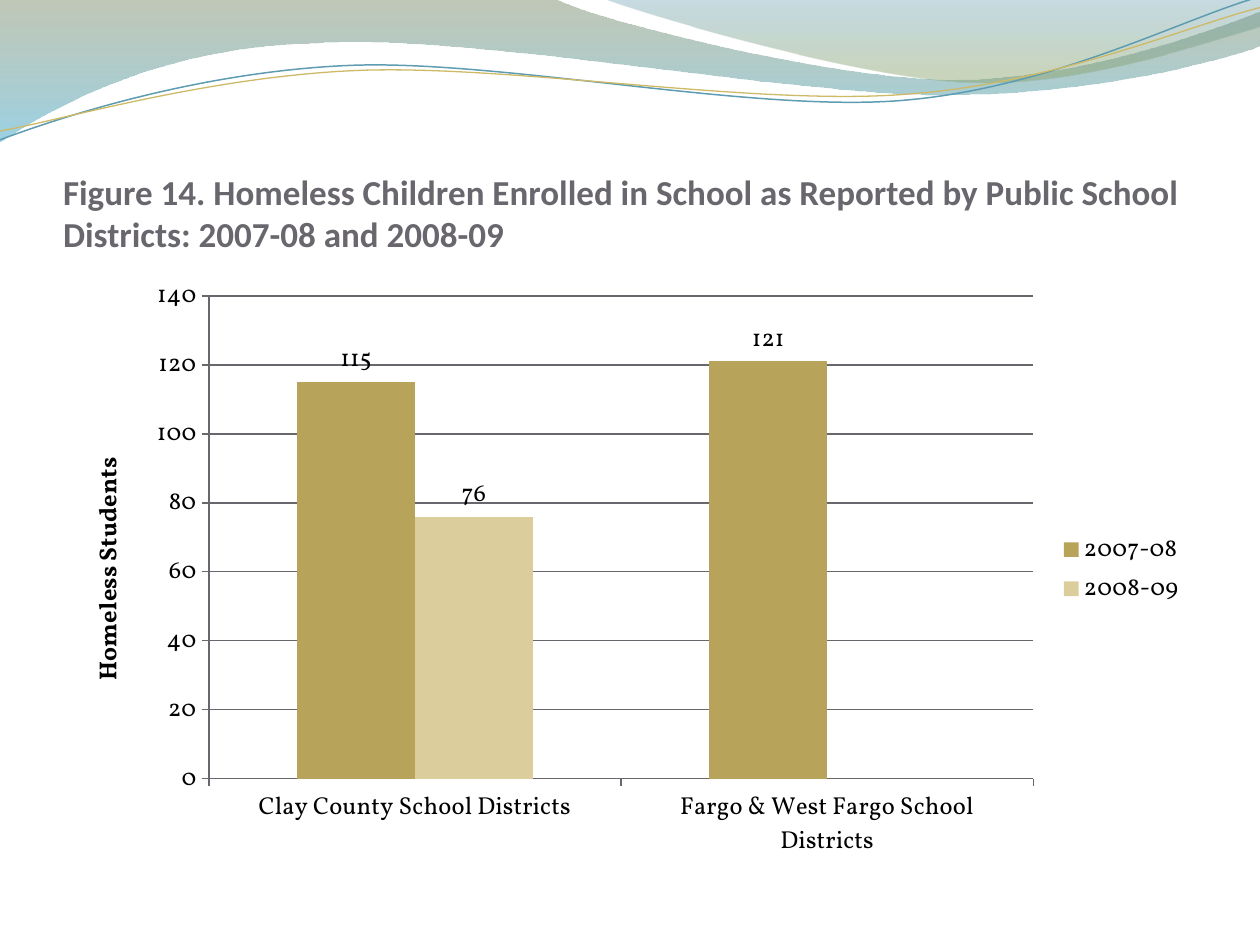
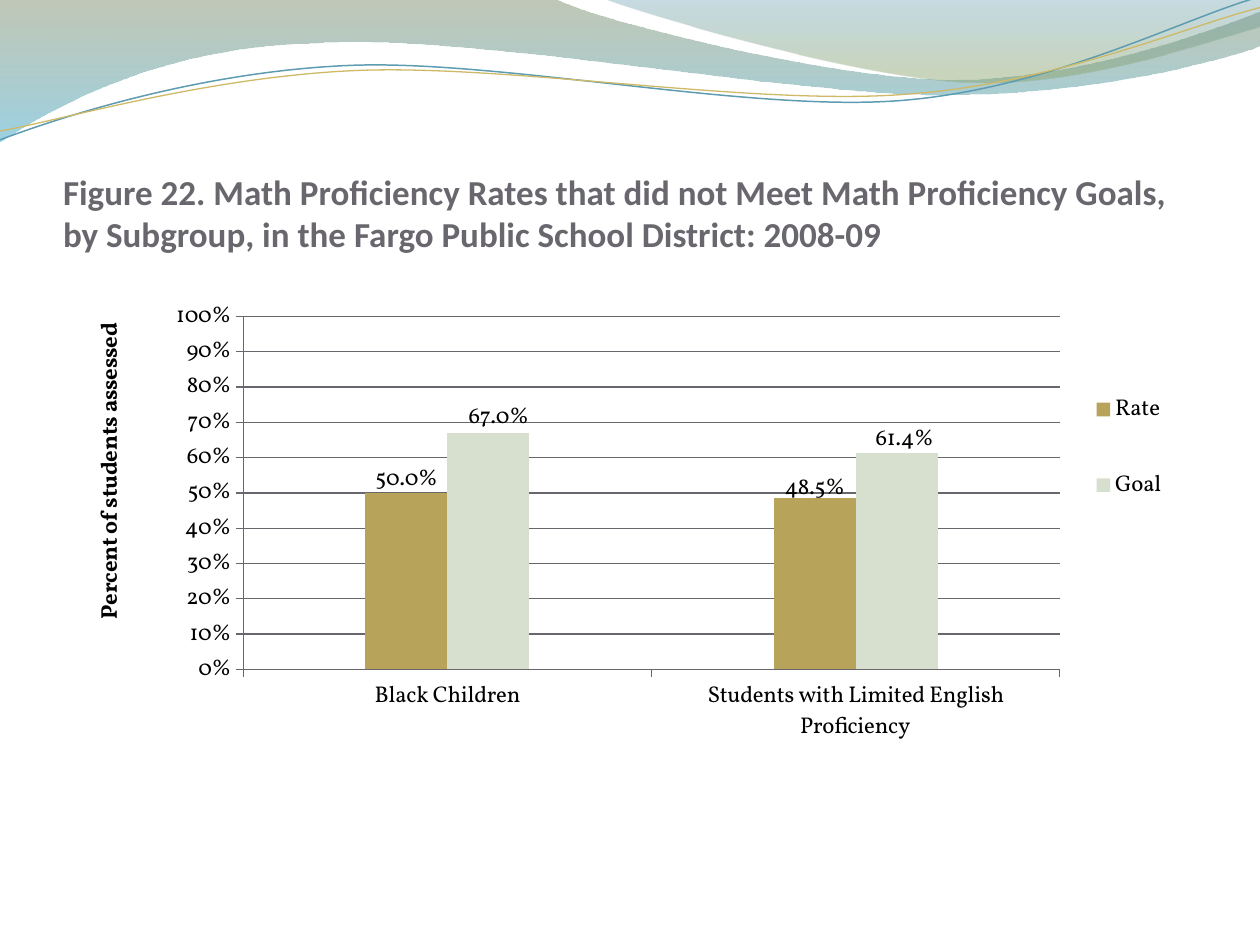
from lxml import etree
from pptx import Presentation
from pptx.chart.data import CategoryChartData
from pptx.dml.color import RGBColor
from pptx.enum.chart import XL_CHART_TYPE, XL_LABEL_POSITION, XL_LEGEND_POSITION
from pptx.enum.text import MSO_ANCHOR, MSO_AUTO_SIZE, PP_ALIGN
from pptx.oxml.ns import qn
from pptx.util import Cm, Pt

GREY = RGBColor(0x69, 0x67, 0x6D)
BLACK = RGBColor(0x00, 0x00, 0x00)
GOLD = RGBColor(0xB7, 0xA3, 0x5A)
SAND = RGBColor(0xDB, 0xCD, 0x9C)
MINT = RGBColor(0xD7, 0xDF, 0xCE)
OLIVE = RGBColor(0x74, 0x85, 0x5E)
SKY = RGBColor(0x4A, 0xAC, 0xCE)
TEAL = RGBColor(0x45, 0x88, 0x9F)
MOSS = RGBColor(0x8A, 0xA3, 0x6D)
BLUE = RGBColor(0x5E, 0x9C, 0xB1)
YELLOW = RGBColor(0xCE, 0xB9, 0x66)
TITLE_FONT, CHART_FONT = "Calibri", "Vollkorn"

# Content: boxes and label shifts are percentages of the chart frame
FIGURES = [
    dict(
        title="Figure 14. Homeless Children Enrolled in School as Reported by "
              "Public School Districts: 2007-08 and 2008-09",
        axis_title="Homeless Students",
        categories=["Clay County School Districts", "Fargo & West Fargo School Districts"],
        series=[("2007-08", [115, 121], GOLD), ("2008-09", [76, None], SAND)],
        size=14, gap=150, top_value=140, step=20,
        axis_format="General", label_format="General",
        boxes={}, label_shifts=[],
    ),
    dict(
        title="Figure 22. Math Proficiency Rates that did not Meet Math Proficiency "
              "Goals, by Subgroup, in the Fargo Public School District: 2008-09",
        axis_title="Percent of students assessed",
        categories=["Black Children", "Students with Limited English Proficiency"],
        series=[("Rate", [0.5, 0.485], GOLD), ("Goal", [0.67, 0.614], MINT)],
        size=13, gap=298, top_value=1, step=0.1,
        axis_format="0%", label_format="0.0%",
        boxes={"c:plotArea": (15.9, 8.2, 72, 58.4), "c:valAx/c:title": (2.3, 8.6),
               "c:legend": (89.5, 13.6, 9, 32.5)},
        label_shifts=[[(0, 1.1), (0, 1.8)], [(0.9, 0.8), (0.7, 1.2)]],
    ),
]

# Wave outlines in inches: two numbers draw a line, six a Bezier curve
BANDS = [
    dict(start=(0, 0), stops=[(0, OLIVE, 45), (1, SKY, 55)],
         steps=[(4.4, -0.01), (4.76, 0.17, 6.64, 0.63, 7.58, 0.63),
                (8.53, 0.63, 9.58, 0.26, 10, 0.09), (10.01, 0.36),
                (9.83, 0.44, 8.7, 0.76, 7.46, 0.75), (6.22, 0.75, 3.82, 0.28, 2.57, 0.34),
                (1.29, 0.36, 0.46, 0.83, -0.01, 1.13), (0, 0)]),
    dict(start=(4.79, -0.01), stops=[(0, TEAL, 30), (0.8, MOSS, 45)],
         steps=[(5.09, 0.11, 6.82, 0.62, 7.69, 0.65),
                (8.56, 0.69, 9.61, 0.32, 10, 0.21), (10, 0), (4.79, -0.01)]),
]
RIBBONS = [
    dict(start=(0, 1.11), color=BLUE, width=0.85,
         steps=[(0.48, 0.93, 1.58, 0.57, 2.77, 0.52), (3.95, 0.47, 5.93, 0.89, 7.13, 0.8),
                (8.33, 0.71, 9.38, 0.15, 9.98, -0.02)]),
    dict(start=(0, 1.04), color=YELLOW, width=0.75,
         steps=[(0.47, 0.96, 1.64, 0.61, 2.83, 0.56), (4.03, 0.51, 5.97, 0.84, 7.17, 0.75),
                (8.36, 0.67, 9.41, 0.21, 10, 0.06)]),
]


def add_wave(slide, wave, close):
    """Draw the control points as lines, then join each curve's three into a Bezier."""
    corners = [(Cm(step[i] * 2.54), Cm(step[i + 1] * 2.54))
               for step in wave["steps"] for i in range(0, len(step), 2)]
    builder = slide.shapes.build_freeform(*(Cm(value * 2.54) for value in wave["start"]))
    builder.add_line_segments(corners, close=close)
    shape = builder.convert_to_shape()
    shape.shadow.inherit = False
    lines = iter(list(shape.element.iter(qn("a:lnTo"))))
    for step in wave["steps"]:
        first = next(lines)
        if len(step) == 6:
            first.tag = qn("a:cubicBezTo")
            for line in (next(lines), next(lines)):
                first.append(line[0])
                line.getparent().remove(line)
    return shape


def add_band(slide, band):
    shape = add_wave(slide, band, close=True)
    shape.line.fill.background()
    shape.fill.gradient()
    shape.fill.gradient_angle = 270
    for stop, (position, color, _) in zip(shape.fill.gradient_stops, band["stops"]):
        stop.position = position
        stop.color.rgb = color
    for tint, (_, _, opacity) in zip(shape.element.iter(qn("a:srgbClr")), band["stops"]):
        etree.SubElement(tint, qn("a:alpha"), val=str(opacity * 1000))
    return shape


def add_ribbon(slide, ribbon):
    shape = add_wave(slide, ribbon, close=False)
    shape.fill.background()
    shape.line.color.rgb = ribbon["color"]
    shape.line.width = Pt(ribbon["width"])
    return shape


def decorate_layout(slide, layout):
    """Build the waves once and move them behind everything on the layout."""
    waves = [add_band(slide, band) for band in BANDS]
    waves += [add_ribbon(slide, ribbon) for ribbon in RIBBONS]
    for index, wave in enumerate(waves):
        layout.shapes.element.insert(2 + index, wave.element)


def set_title(slide, text):
    title = slide.shapes.title
    title.left, title.top, title.width, title.height = Cm(1.27), Cm(1.96), Cm(22.86), Cm(3.17)
    frame = title.text_frame
    frame.text = text
    frame.word_wrap = True
    frame.auto_size = MSO_AUTO_SIZE.NONE
    frame.vertical_anchor = MSO_ANCHOR.BOTTOM
    frame.margin_left = frame.margin_right = frame.margin_bottom = 0
    frame.margin_top = Cm(0.13)
    paragraph = frame.paragraphs[0]
    paragraph.alignment = PP_ALIGN.LEFT
    paragraph.font.name = TITLE_FONT
    paragraph.font.size = Pt(20)
    paragraph.font.bold = True
    paragraph.font.color.rgb = GREY


def place_part(element, box, index=1, modes=("xMode", "yMode")):
    """Give a chart part a manual place."""
    for old in element.findall(qn("c:layout")):
        element.remove(old)
    layout = etree.Element(qn("c:layout"))
    manual = etree.SubElement(layout, qn("c:manualLayout"))
    if element.tag == qn("c:plotArea"):
        etree.SubElement(manual, qn("c:layoutTarget"), val="inner")
    for mode in modes:
        etree.SubElement(manual, qn("c:" + mode), val="edge")
    for side, percent in zip("xywh", box):
        etree.SubElement(manual, qn("c:" + side), val=str(round(percent / 100, 4)))
    element.insert(index, layout)


def add_figure_chart(slide, figure):
    data = CategoryChartData(number_format=figure["label_format"])
    data.categories = figure["categories"]
    for name, values, _ in figure["series"]:
        data.add_series(name, values)
    chart = slide.shapes.add_chart(XL_CHART_TYPE.COLUMN_CLUSTERED, Cm(1.27), Cm(5.38),
                                   Cm(22.86), Cm(12.19), data).chart
    chart.has_title = False
    chart.font.name = CHART_FONT
    chart.font.size = Pt(figure["size"])
    chart.font.color.rgb = BLACK

    # Columns and their labels
    plot = chart.plots[0]
    plot.gap_width = figure["gap"]
    plot.overlap = 0
    plot.vary_by_categories = False
    for series, (_, _, color) in zip(plot.series, figure["series"]):
        series.format.fill.solid()
        series.format.fill.fore_color.rgb = color
        labels = series.data_labels
        labels.show_value = True
        labels.position = XL_LABEL_POSITION.OUTSIDE_END
        labels.number_format = figure["label_format"]
        labels.number_format_is_linked = False
    for series, shifts in zip(plot.series, figure["label_shifts"]):
        for index in range(len(shifts)):
            series.points[index].data_label.position = XL_LABEL_POSITION.OUTSIDE_END
        for label, shift in zip(chart.plots[0].series[series.index].data_labels
                                ._element.findall(qn("c:dLbl")), shifts):
            place_part(label, shift, modes=())

    # Axes and grid
    axis = chart.value_axis
    axis.minimum_scale, axis.maximum_scale = 0, figure["top_value"]
    axis.major_unit = figure["step"]
    axis.tick_labels.number_format = figure["axis_format"]
    axis.tick_labels.number_format_is_linked = False
    axis.has_major_gridlines = True
    for ruled in (axis, chart.category_axis, axis.major_gridlines):
        ruled.format.line.color.rgb = GREY
        ruled.format.line.width = Pt(0.75)
    heading = axis.axis_title.text_frame
    heading.text = figure["axis_title"]
    font = heading.paragraphs[0].font
    font.name, font.size, font.bold = CHART_FONT, Pt(figure["size"]), True
    font.color.rgb = BLACK

    # Legend and placement
    chart.has_legend = True
    chart.legend.position = XL_LEGEND_POSITION.RIGHT
    chart.legend.include_in_layout = False
    for part, box in figure["boxes"].items():
        element = chart.element.find(".//" + "/".join(qn(tag) for tag in part.split("/")))
        place_part(element, box, index=0 if part == "c:plotArea" else 1)


def main():
    deck = Presentation()
    deck.slide_width, deck.slide_height = Cm(25.4), Cm(19.05)
    layout = deck.slide_layouts[5]
    for number, figure in enumerate(FIGURES):
        slide = deck.slides.add_slide(layout)
        if number == 0:
            decorate_layout(slide, layout)
        set_title(slide, figure["title"])
        add_figure_chart(slide, figure)
    deck.save("out.pptx")


if __name__ == "__main__":
    main()
